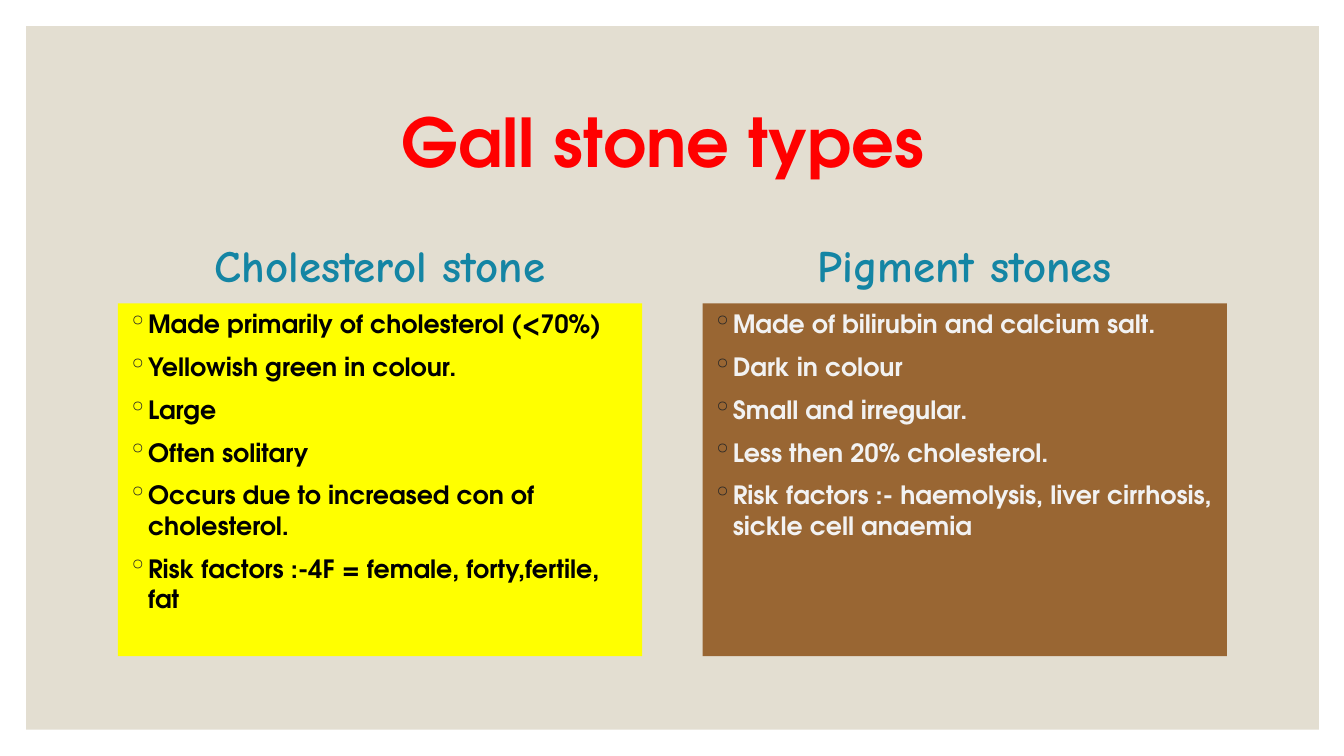
from lxml.etree import SubElement
from pptx import Presentation
from pptx.dml.color import RGBColor
from pptx.enum.shapes import MSO_SHAPE
from pptx.enum.text import MSO_ANCHOR, PP_ALIGN
from pptx.oxml.ns import qn
from pptx.util import Inches, Pt

BODY_FONT = "TeX Gyre Adventor"
HEADING_FONT = "Comic Neue"
MARGIN, COLUMN_WIDTH, COLUMN_STEP = 1.17, 5.2, 5.8
STONES = [
    ("Cholesterol stone", "FFFF00", "000000", [
        "Made primarily of cholesterol (<70%)",
        "Yellowish green in colour.",
        "Large",
        "Often solitary",
        "Occurs due to increased con of cholesterol.",
        "Risk factors :-4F = female, forty,fertile, fat",
    ]),
    ("Pigment stones", "996633", "F2F2F2", [
        "Made of bilirubin and calcium salt.",
        "Dark in colour",
        "Small and irregular.",
        "Less then 20% cholesterol.",
        "Risk factors :- haemolysis, liver cirrhosis, sickle cell anaemia",
    ]),
]


def rgb(value):
    return RGBColor.from_string(value)


def style_paragraph(paragraph, font_name, size, color):
    for run in paragraph.runs:
        run.font.name = font_name
        run.font.size = Pt(size)
        run.font.bold = True
        run.font.color.rgb = rgb(color)


def add_panel(slide, left, top, width, height, fill):
    panel = slide.shapes.add_shape(MSO_SHAPE.RECTANGLE, Inches(left), Inches(top),
                                   Inches(width), Inches(height))
    panel.shadow.inherit = False
    panel.fill.solid()
    panel.fill.fore_color.rgb = rgb(fill)
    panel.line.fill.background()
    return panel


def add_heading(slide, left, top, width, height, text, font_name, size, color):
    """Place one centred line of bold text in the given box."""
    heading = slide.shapes.add_textbox(Inches(left), Inches(top), Inches(width), Inches(height))
    frame = heading.text_frame
    frame.word_wrap = True
    frame.vertical_anchor = MSO_ANCHOR.MIDDLE
    frame.text = text
    paragraph = frame.paragraphs[0]
    paragraph.alignment = PP_ALIGN.CENTER
    style_paragraph(paragraph, font_name, size, color)
    return paragraph


def add_bullet(paragraph):
    properties = paragraph._p.get_or_add_pPr()
    properties.set("marL", str(Inches(0.2)))
    properties.set("indent", str(-Inches(0.2)))
    bullet_color = SubElement(properties, qn("a:buClr"))
    SubElement(bullet_color, qn("a:srgbClr"), val="262626")
    SubElement(properties, qn("a:buChar"), char="◦")


def add_stone_column(slide, left, top, width, stone):
    """Place a heading and its panel of bulleted facts below it."""
    name, fill, text_color, facts = stone
    add_heading(slide, left, top, width, 0.7, name, HEADING_FONT, 32, "1485A4")
    panel = add_panel(slide, left, top + 0.74, width, 3.5, fill)
    frame = panel.text_frame
    frame.word_wrap = True
    frame.vertical_anchor = MSO_ANCHOR.TOP
    frame.text = "\n".join(facts)
    for paragraph in frame.paragraphs:
        paragraph.alignment = PP_ALIGN.LEFT
        paragraph.space_before = Pt(9)
        add_bullet(paragraph)
        style_paragraph(paragraph, BODY_FONT, 18, text_color)


def main():
    presentation = Presentation()
    presentation.slide_width = Inches(13.33)
    presentation.slide_height = Inches(7.5)
    slide = presentation.slides.add_slide(presentation.slide_layouts[6])
    add_panel(slide, 0.26, 0.26, 12.82, 6.98, "E3DED1")
    title = add_heading(slide, MARGIN, 0.7, 11, 1.5, "Gall stone types ",
                        BODY_FONT, 48, "FF0000")
    title.line_spacing = 0.9
    for index, stone in enumerate(STONES):
        add_stone_column(slide, MARGIN + index * COLUMN_STEP, 2.27, COLUMN_WIDTH, stone)
    presentation.save("out.pptx")


if __name__ == "__main__":
    main()
